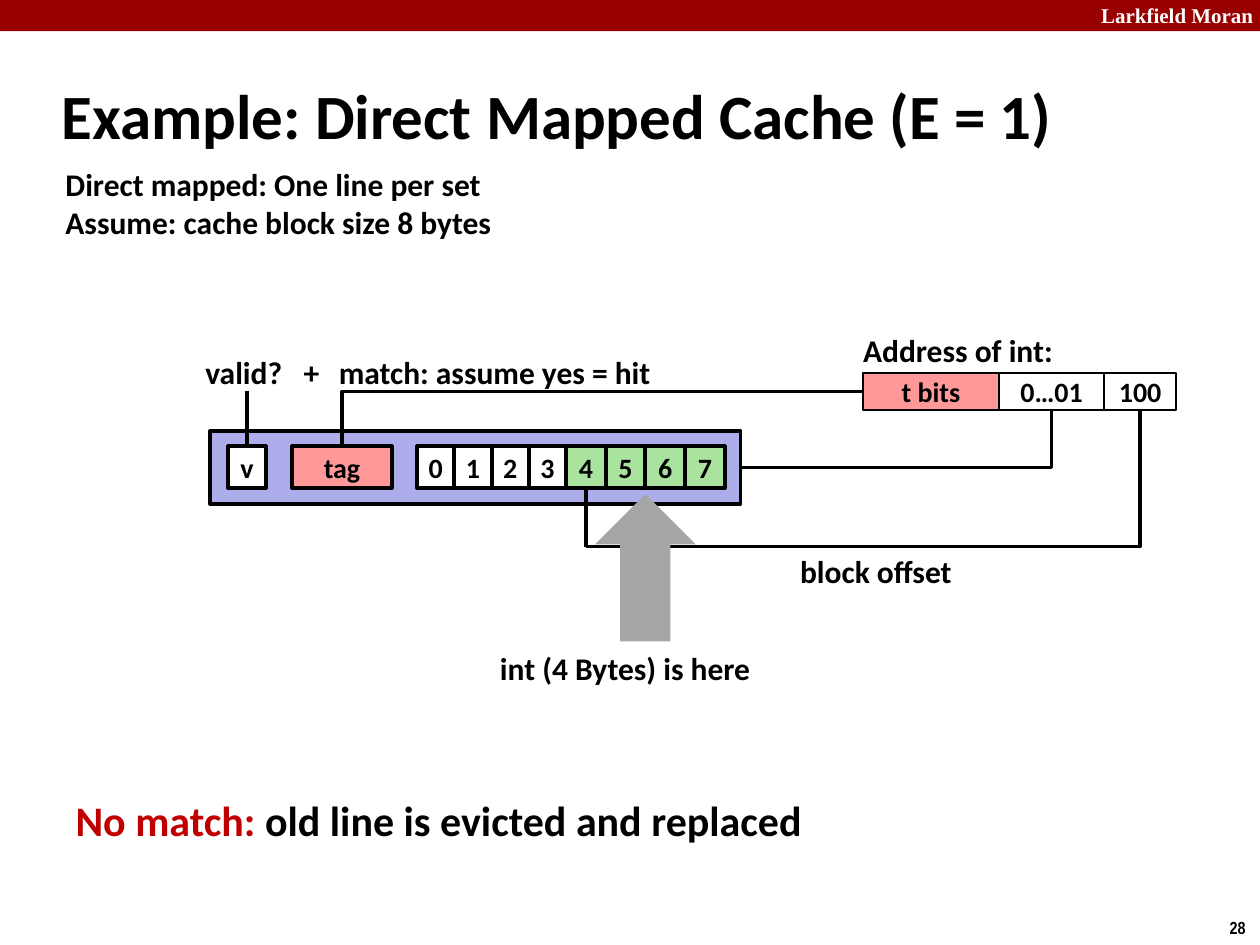
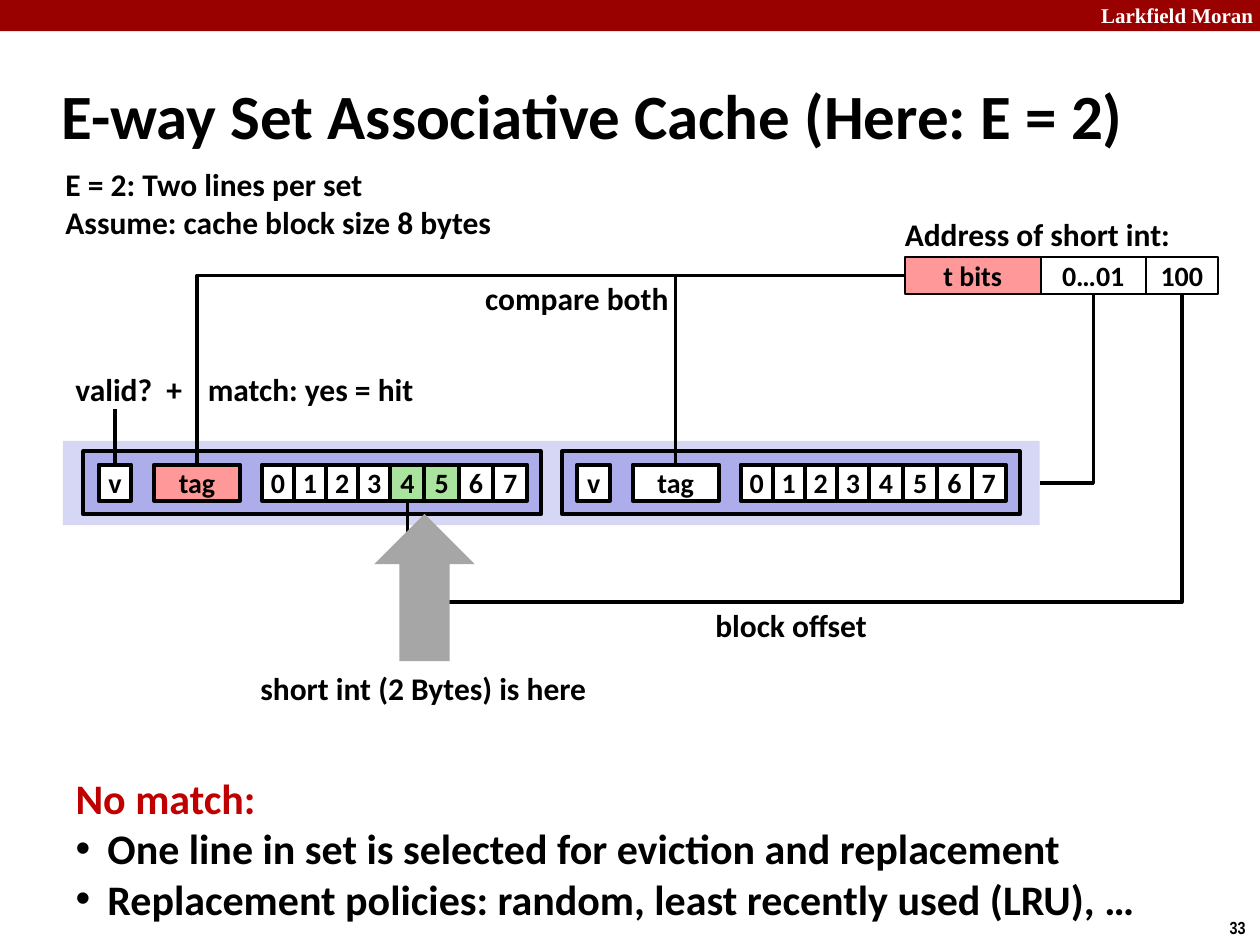
from itertools import accumulate

from lxml.etree import SubElement
from pptx import Presentation
from pptx.dml.color import RGBColor
from pptx.enum.shapes import MSO_CONNECTOR, MSO_SHAPE
from pptx.enum.text import MSO_ANCHOR, MSO_AUTO_SIZE, PP_ALIGN
from pptx.oxml.ns import qn
from pptx.util import Cm, Pt

COLOURS = {
    "band": "990000", "white": "FFFFFF", "black": "000000", "alert": "C00000",
    "tag": "FF9999", "line": "ADADEB", "set": "D6D6F5", "hit": "A9E39D",
    "arrow": "A6A6A6",
}
FONT = "Calibri"
BAND_LABEL = "Larkfield Moran"

# All places and sizes below are in centimetres.
SLIDES = [
    {
        "number": "28",
        "title": "Example: Direct Mapped Cache (E = 1)",
        "premise": ["Direct mapped: One line per set", "Assume: cache block size 8 bytes"],
        "address": (17.4, 7.52), "address_caption": "Address of int:",
        "scale": 1, "set_box": None,
        "cache_lines": [{"at": (4.24, 8.69), "tag": "tag", "hits": range(4, 8)}],
        "offset_level": 11.02, "arrow_top": 9.96,
        "labels": [
            ("match: assume yes = hit", 6.58, 6.99),
            ("valid?\u00a0\u00a0 +", 3.89, 6.99),
            ("int (4 Bytes) is here", 9.83, 12.95),
            ("block offset", 15.88, 11),
        ],
        "outcome_top": 15.88,
        "outcome": [("No match: ", "old line is evicted and replaced")],
        "bullets": [],
    },
    {
        "number": "33",
        "title": "E-way Set Associative Cache (Here: E = 2)",
        "premise": ["E = 2: Two lines per set", "Assume: cache block size 8 bytes"],
        "address": (18.24, 5.18), "address_caption": "Address of short int:",
        "scale": 0.863, "set_box": (1.27, 8.89, 19.69, 1.7),
        "cache_lines": [
            {"at": (1.68, 9.1), "tag": "tag", "hits": range(4, 6)},
            {"at": (11.33, 9.1), "tag": "white", "hits": ()},
        ],
        "offset_level": 12.14, "arrow_top": 10.36,
        "labels": [
            ("compare both", 9.53, 5.51),
            ("valid?\u00a0 +", 1.27, 7.34),
            ("match: yes = hit", 3.94, 7.34),
            ("block offset", 14.17, 12.09),
            ("short int (2 Bytes) is here", 5, 13.36),
        ],
        "outcome_top": 15.44,
        "outcome": [("No match:", "")],
        "bullets": [
            "One line in set is selected for eviction and replacement",
            "Replacement policies: random, least recently used (LRU), …",
        ],
    },
]

ADDRESS_FIELDS = [("t bits", 2.74, "tag"), ("0…01", 2.12, "white"), ("100", 1.45, "white")]
ADDRESS_HEIGHT = 0.75
# Cache line measures at scale 1
LINE_SIZE = (10.69, 1.47)
CELL_TOP, CELL_HEIGHT = 0.31, 0.84
VALID_LEFT, VALID_WIDTH = 0.36, 0.76
TAG_LEFT, TAG_WIDTH = 1.65, 2.01
BYTES_LEFT, BYTE_WIDTHS = 4.17, [0.75] * 4 + [0.8] * 4
ARROW_SIZE = (2.03, 2.97)


def colour(name):
    return RGBColor.from_string(COLOURS[name])


def style(para, size, name="black", font=FONT):
    for span in para.runs:
        span.font.size, span.font.name, span.font.bold = Pt(size), font, True
        span.font.color.rgb = colour(name)


def add_block(page, kind, place, fill, text="", outline=0):
    block = page.shapes.add_shape(kind, *map(Cm, place))
    block.shadow.inherit = False
    block.fill.solid()
    block.fill.fore_color.rgb = colour(fill)
    if outline:
        block.line.color.rgb = colour("black")
        block.line.width = Pt(outline)
    else:
        block.line.fill.background()
    if text:
        frame = block.text_frame
        frame.text = text
        frame.word_wrap = False
        frame.vertical_anchor = MSO_ANCHOR.MIDDLE
        frame.paragraphs[0].alignment = PP_ALIGN.CENTER
        style(frame.paragraphs[0], 16)
    return block


def add_label(page, text, left, top, size=18, name="black", font=FONT):
    """Left-aligned text box as wide as its longest line roughly needs."""
    lines = text.split("\n")
    width = 0.5 + max(map(len, lines)) * size * 0.018
    height = 0.25 + len(lines) * size * 0.043
    box = page.shapes.add_textbox(Cm(left), Cm(top), Cm(width), Cm(height))
    box.text_frame.text = text
    box.text_frame.word_wrap = False
    for para in box.text_frame.paragraphs:
        para.alignment = PP_ALIGN.LEFT
        style(para, size, name, font)


def add_wire(page, start, end, bent=False):
    """Connector; a bent one runs across from start, then up or down to end."""
    kind = MSO_CONNECTOR.ELBOW if bent else MSO_CONNECTOR.STRAIGHT
    wire = page.shapes.add_connector(kind, *map(Cm, (*start, *end)))
    wire.line.color.rgb = colour("black")
    wire.line.width = Pt(2)
    properties = wire.element.spPr
    if bent:
        properties.find(qn("a:prstGeom")).set("prst", "bentConnector2")
    SubElement(properties, qn("a:effectLst"))


def place_holder(holder, left, top, width, height, anchor):
    holder.left, holder.top, holder.width, holder.height = map(Cm, (left, top, width, height))
    frame = holder.text_frame
    frame.auto_size = MSO_AUTO_SIZE.NONE
    frame.vertical_anchor = anchor
    return frame


def set_bullet(para, mark, indent):
    properties = para._p.get_or_add_pPr()
    properties.set("marL", str(Cm(indent)))
    properties.set("indent", str(-Cm(indent)))
    if mark:
        SubElement(properties, qn("a:buFont"), typeface="Arial")
        SubElement(properties, qn("a:buChar"), char=mark)
    else:
        SubElement(properties, qn("a:buNone"))


def add_frame(page, content):
    """Band, title, premise and page number, the same on every slide."""
    add_block(page, MSO_SHAPE.RECTANGLE, (0, 0, 25.4, 0.63), "band")
    add_label(page, BAND_LABEL, 21.95, -0.07, 12, "white", "Times New Roman")
    add_label(page, content["number"], 24.54, 18.36, 10, font="Arial Narrow")
    frame = place_holder(page.shapes.title, 0.99, 1.24, 23, 2.11, MSO_ANCHOR.MIDDLE)
    frame.text = content["title"]
    frame.paragraphs[0].alignment = PP_ALIGN.LEFT
    style(frame.paragraphs[0], 36)
    add_label(page, "\n".join(content["premise"]), 1.07, 3.2)


def add_outcome(page, content):
    frame = place_holder(page.placeholders[1], 1.27, content["outcome_top"], 22.5, 3.33,
                         MSO_ANCHOR.TOP)
    lead, rest = content["outcome"][0]
    para = frame.paragraphs[0]
    para.text = lead
    style(para, 24)
    para.runs[0].font.color.rgb = colour("alert")
    if rest:
        span = para.add_run()
        span.text = rest
        style(para, 24)
        para.runs[0].font.color.rgb = colour("alert")
    para.space_before = Pt(0)
    set_bullet(para, None, 0)
    for text in content["bullets"]:
        para = frame.add_paragraph()
        para.text = text
        para.space_before = Pt(0)
        set_bullet(para, "•", 0.64)
        style(para, 24)


def add_address(page, content):
    """Draw the address fields and return the centre of each."""
    left, top = content["address"]
    add_label(page, content["address_caption"], left - 0.25, top - 0.97)
    centres = []
    for text, width, fill in ADDRESS_FIELDS:
        add_block(page, MSO_SHAPE.RECTANGLE, (left, top, width, ADDRESS_HEIGHT), fill, text, 1)
        centres.append(left + width / 2)
        left += width
    return centres


def add_cache_line(page, cache_line, scale):
    """Draw one cache line and return the places where wires and arrow attach."""
    left, top = cache_line["at"]
    width, height = (scale * side for side in LINE_SIZE)
    add_block(page, MSO_SHAPE.RECTANGLE, (left, top, width, height), "line", outline=2.25)
    byte_lefts = list(accumulate(BYTE_WIDTHS, initial=BYTES_LEFT))
    cells = [("v", VALID_LEFT, VALID_WIDTH, "white"),
             ("tag", TAG_LEFT, TAG_WIDTH, cache_line["tag"])]
    for index, byte_width in enumerate(BYTE_WIDTHS):
        fill = "hit" if index in cache_line["hits"] else "white"
        cells.append((str(index), byte_lefts[index], byte_width, fill))
    cell_top, cell_height = top + scale * CELL_TOP, scale * CELL_HEIGHT
    centres = {}
    for text, offset, cell_width, fill in cells:
        place = (left + scale * offset, cell_top, scale * cell_width, cell_height)
        add_block(page, MSO_SHAPE.RECTANGLE, place, fill, text, 2.25)
        centres[text] = place[0] + place[2] / 2
    return {"centres": centres, "top": cell_top, "bottom": cell_top + cell_height,
            "right": left + width, "middle": top + height / 2}


def add_lookup(page, content):
    """Draw the address, the cache lines and the wires between them."""
    _, index_centre, offset_centre = add_address(page, content)
    address_left, address_top = content["address"]
    address_bottom = address_top + ADDRESS_HEIGHT
    set_box = content["set_box"]
    if set_box:
        add_block(page, MSO_SHAPE.RECTANGLE, set_box, "set")
    drawn = [add_cache_line(page, line, content["scale"]) for line in content["cache_lines"]]
    first = drawn[0]

    set_right = set_box[0] + set_box[2] if set_box else first["right"]
    add_wire(page, (set_right, first["middle"]), (index_centre, address_bottom), bent=True)
    for line in drawn:
        add_wire(page, (address_left, address_top + ADDRESS_HEIGHT / 2),
                 (line["centres"]["tag"], line["top"]), bent=True)
    valid = first["centres"]["v"]
    add_wire(page, (valid, first["top"] - 1.12), (valid, first["top"]))

    hits = [first["centres"][str(index)] for index in content["cache_lines"][0]["hits"]]
    corner = (hits[0], content["offset_level"])
    add_wire(page, (hits[0], first["bottom"]), corner)
    add_wire(page, corner, (offset_centre, address_bottom), bent=True)
    arrow_left = (hits[0] + hits[-1] - ARROW_SIZE[0]) / 2
    add_block(page, MSO_SHAPE.UP_ARROW, (arrow_left, content["arrow_top"], *ARROW_SIZE), "arrow")


def main():
    deck = Presentation()
    deck.slide_width, deck.slide_height = Cm(25.4), Cm(19.05)
    for content in SLIDES:
        page = deck.slides.add_slide(deck.slide_layouts[1])
        add_frame(page, content)
        add_lookup(page, content)
        for text, left, top in content["labels"]:
            add_label(page, text, left, top)
        add_outcome(page, content)
    deck.save("out.pptx")


if __name__ == "__main__":
    main()
